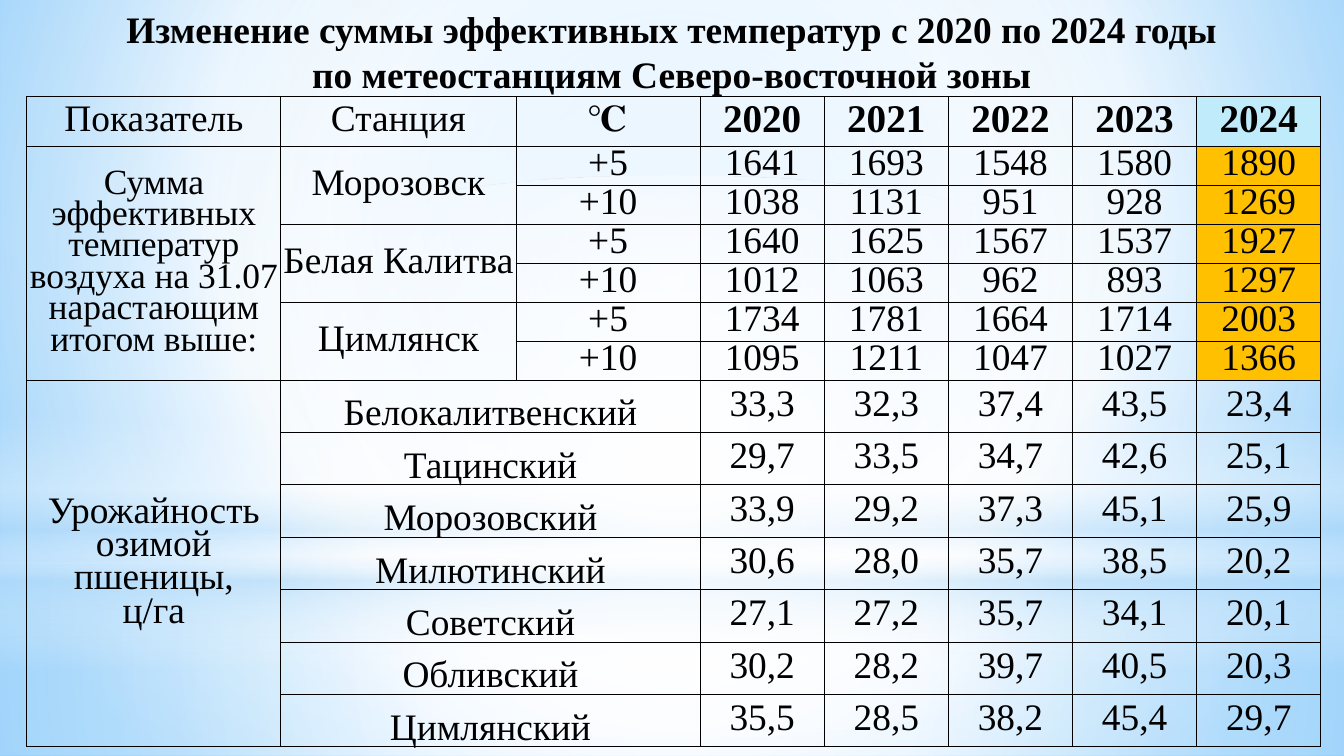
import pptx
import pptx.util
import pptx.oxml
import pptx.oxml.ns
import pptx.dml.color
import pptx.enum.shapes
import pptx.enum.text
from lxml import etree

Inches = pptx.util.Inches
qn = pptx.oxml.ns.qn
SHAPE = pptx.enum.shapes.MSO_SHAPE
ANCHOR = pptx.enum.text.MSO_ANCHOR

INK = {
    "text": "000000", "white": "FFFFFF", "mist": "B4DCFA", "sky": "9ED5FF",
    "blue": "5BB9FF", "head": "BFEBFA", "gold": "FFC000",
}
YEARS = ["2020", "2021", "2022", "2023", "2024"]
HEAT = [
    ("Морозовск", "+5", "1641 1693 1548 1580 1890"),
    ("", "+10", "1038 1131 951 928 1269"),
    ("Белая Калитва", "+5", "1640 1625 1567 1537 1927"),
    ("", "+10", "1012 1063 962 893 1297"),
    ("Цимлянск", "+5", "1734 1781 1664 1714 2003"),
    ("", "+10", "1095 1211 1047 1027 1366"),
]
CROP = [
    ("Белокалитвенский", "33,3 32,3 37,4 43,5 23,4"),
    ("Тацинский", "29,7 33,5 34,7 42,6 25,1"),
    ("Морозовский", "33,9 29,2 37,3 45,1 25,9"),
    ("Милютинский", "30,6 28,0 35,7 38,5 20,2"),
    ("Советский", "27,1 27,2 35,7 34,1 20,1"),
    ("Обливский", "30,2 28,2 39,7 40,5 20,3"),
    ("Цимлянский", "35,5 28,5 38,2 45,4 29,7"),
]
HEAT_NAME = "Сумма эффективных температур воздуха на 31.07 нарастающим итогом выше:"
CROP_NAME = "Урожайность озимой пшеницы,\nц/га"
WIDE = [1.89, 1.75, 1.37] + [0.924] * 5
TALL = [0.37] + [0.29] * 6 + [0.39] * 7


def color(name):
    return pptx.dml.color.RGBColor.from_string(INK[name])


def write(frame, text, size=20, bold=False, space=None):
    for i, line in enumerate(text.split("\n")):
        para = frame.paragraphs[0] if i == 0 else frame.add_paragraph()
        para.alignment = pptx.enum.text.PP_ALIGN.CENTER
        para.line_spacing = space
        run = para.add_run()
        run.text = line
        run.font.name = "Times New Roman"
        run.font.size = pptx.util.Pt(size)
        run.font.bold = bold
        run.font.color.rgb = color("text")


def shade(owner, fill, stops, rect=None):
    fill.gradient()
    grad = next(owner.iter(qn("a:gradFill")))
    for part in list(grad):
        grad.remove(part)
    chain = etree.SubElement(grad, qn("a:gsLst"))
    for spot, name, alpha in stops:
        stop = etree.SubElement(chain, qn("a:gs"), pos=str(spot * 1000))
        tint = etree.SubElement(stop, qn("a:srgbClr"), val=INK[name])
        if alpha < 100:
            etree.SubElement(tint, qn("a:alpha"), val=str(alpha * 1000))
    if rect is None:
        etree.SubElement(grad, qn("a:lin"), ang="5400000", scaled="0")
        return
    route = etree.SubElement(grad, qn("a:path"), path="circle")
    sides = {side: str(cut * 1000) for side, cut in zip("ltrb", rect)}
    etree.SubElement(route, qn("a:fillToRect"), sides)


def glow(slide, kind, box, stops, rect=None):
    shape = slide.shapes.add_shape(kind, *map(Inches, box))
    shape.shadow.inherit = False
    shape.line.fill.background()
    shade(shape.element, shape.fill, stops, rect)


def scene(slide, x, y, w, h):
    mid = (50, 50, 50, 50)
    shade(slide.element, slide.background.fill,
          [(0, "sky", 100), (60, "white", 100), (100, "blue", 100)], (20, 10, 20, 60))
    cut = 4.19
    glow(slide, SHAPE.RECTANGLE, (x, y + cut, w, h - cut),
         [(0, "white", 91), (37, "white", 76), (100, "mist", 79)], mid)
    glow(slide, SHAPE.RECTANGLE, (x, y, w, cut),
         [(0, "white", 89), (48, "white", 62), (100, "mist", 79)], mid)
    glow(slide, SHAPE.RECTANGLE, (x, y + 3.09, w, 1.88),
         [(0, "white", 0), (29, "white", 30), (45, "mist", 40),
          (55, "white", 26), (65, "mist", 60), (100, "white", 0)])
    glow(slide, SHAPE.OVAL, (x, y + 1.31, w, cut),
         [(0, "white", 100), (56, "white", 0)], mid)


def edge(cell):
    props = cell._tc.get_or_add_tcPr()
    for i, side in enumerate("LRTB"):
        line = etree.Element(qn("a:ln" + side), w="6350")
        solid = etree.SubElement(line, qn("a:solidFill"))
        etree.SubElement(solid, qn("a:srgbClr"), val=INK["text"])
        props.insert(i, line)


def style(cell, text, fill=None, low=False, **form):
    cell.margin_left = cell.margin_right = cell.margin_top = cell.margin_bottom = 0
    cell.vertical_anchor = ANCHOR.BOTTOM if low else ANCHOR.MIDDLE
    if fill:
        cell.fill.solid()
        cell.fill.fore_color.rgb = color(fill)
    else:
        cell.fill.background()
    edge(cell)
    write(cell.text_frame, text, space=0.8, **form)


def grid(slide, x, y, w, h):
    rows = [["Показатель", "Станция", "℃"] + YEARS]
    rows += [["", place, mark] + nums.split() for place, mark, nums in HEAT]
    rows += [["", place, ""] + nums.split() for place, nums in CROP]
    first = len(HEAT) + 1
    rows[1][0], rows[first][0] = HEAT_NAME, CROP_NAME
    frame = slide.shapes.add_table(len(rows), len(WIDE), *map(Inches, (x, y, w, h)))
    table = frame.table
    table.first_row = table.horz_banding = False
    for col, size in zip(table.columns, WIDE):
        col.width = Inches(size)
    for row, size in zip(table.rows, TALL):
        row.height = Inches(size)
    for r, row in enumerate(rows):
        for c, text in enumerate(row):
            fill = None
            if c == len(WIDE) - 1 and r < first:
                fill = "gold" if r else "head"
            size = 21 if r == 0 and c > 2 else 19 if text == HEAT_NAME else 20
            style(table.cell(r, c), text, fill, low=r >= first and c == 1,
                  size=size, bold=r == 0 and c > 1)
    last = len(rows) - 1
    spans = [(1, 0, first - 1, 0), (first, 0, last, 0)]
    spans += [(r, 1, r + 1, 1) for r in range(1, first, 2)]
    spans += [(r, 1, r, 2) for r in range(first, last + 1)]
    for top, left, base, right in spans:
        table.cell(top, left).merge(table.cell(base, right))


def title(slide, x, y, w, h):
    frame = slide.shapes.add_textbox(*map(Inches, (x, y, w, h))).text_frame
    frame.word_wrap = True
    frame.auto_size = pptx.enum.text.MSO_AUTO_SIZE.SHAPE_TO_FIT_TEXT
    write(frame, "Изменение суммы эффективных температур с 2020 по 2024 годы\n"
          "по метеостанциям Северо-восточной зоны", bold=True)


def main():
    deck = pptx.Presentation()
    deck.slide_width, deck.slide_height = Inches(10), Inches(5.625)
    slide = deck.slides.add_slide(deck.slide_layouts[6])
    scene(slide, 0, 0, 10, 5.625)
    grid(slide, 0.2, 0.72, sum(WIDE), sum(TALL))
    title(slide, 0.07, 0, 9.86, 0.77)
    deck.save("out.pptx")


if __name__ == "__main__":
    main()
